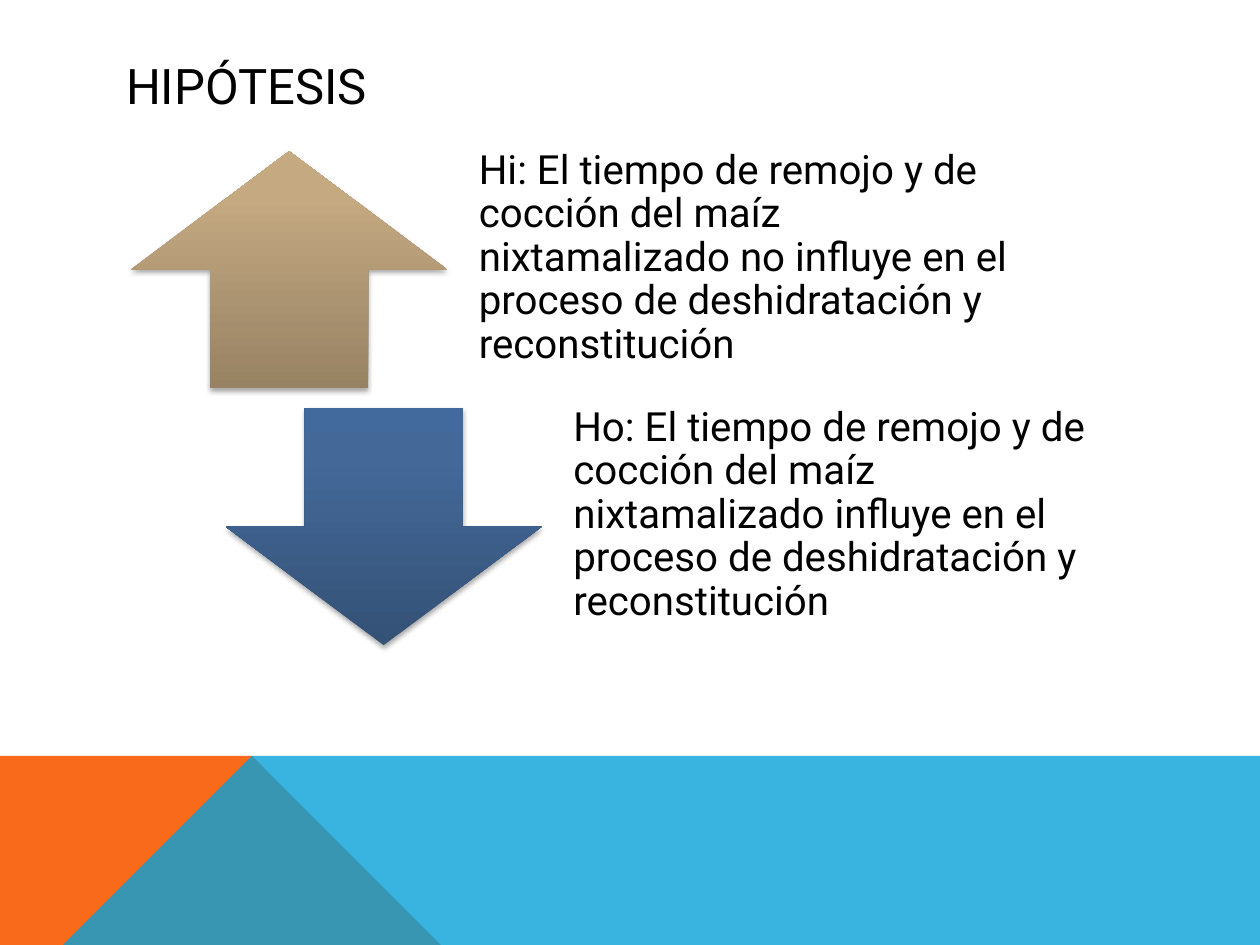
"""Build the hypothesis slide with two opposed arrows and a coloured footer."""
from copy import deepcopy
from dataclasses import dataclass

from lxml import etree
from pptx import Presentation
from pptx import util as u
from pptx.dml.color import RGBColor
from pptx.enum import shapes, text
from pptx.oxml.ns import qn

FONT = "Roboto"
BLACK = "000000"
ARROW_WIDTH, STATEMENT_WIDTH, ROW_HEIGHT = 2.51, 4.61, 1.88
STATEMENT_OFFSET = 2.58
GRADIENT_POSITIONS = (0, 0.8, 1)


@dataclass
class Hypothesis:
    left: float
    top: float
    arrow: shapes.MSO_SHAPE
    gradient: tuple[str, str, str]
    wording: str


@dataclass
class Band:
    points: list[tuple[float, float]]
    color: str
    opacity: int


HYPOTHESES = [
    Hypothesis(1.04, 1.2, shapes.MSO_SHAPE.UP_ARROW, ("978263", "C4A981", "C6AA80"),
               "Hi: El tiempo de remojo y de cocción del maíz nixtamalizado no influye "
               "en el proceso de deshidratación y reconstitución"),
    Hypothesis(1.79, 3.24, shapes.MSO_SHAPE.DOWN_ARROW, ("345176", "446999", "426A9C"),
               "Ho: El tiempo de remojo y de cocción del maíz nixtamalizado influye "
               "en el proceso de deshidratación y reconstitución"),
]
BANDS = [
    Band([(0, 7.5), (0, 5.52), (2.23, 5.52), (3.91, 7.5)], "F96A1B", 100),
    Band([(0, 7.5), (2.23, 5.52), (10, 5.52), (10, 7.5)], "08A1D9", 80),
]


def rgb(color: str) -> RGBColor:
    return RGBColor.from_string(color)


def add_alpha(color_element, percent: int) -> None:
    etree.SubElement(color_element, qn("a:alpha"), val=str(percent * 1000))


def format_text(frame, wording: str, size: float) -> None:
    frame.text = wording
    frame.word_wrap = True
    frame.auto_size = text.MSO_AUTO_SIZE.NONE
    frame.vertical_anchor = text.MSO_ANCHOR.MIDDLE
    paragraph = frame.paragraphs[0]
    paragraph.alignment = text.PP_ALIGN.LEFT
    paragraph.line_spacing = 0.9
    font = paragraph.runs[0].font
    font.name, font.size = FONT, u.Pt(size)
    font.color.rgb = rgb(BLACK)


def add_band(slide, band: Band) -> None:
    builder = slide.shapes.build_freeform(*band.points[0], scale=u.Inches(1))
    builder.add_line_segments(band.points[1:], close=True)
    shape = builder.convert_to_shape()
    shape.fill.solid()
    shape.fill.fore_color.rgb = rgb(band.color)
    shape.line.fill.background()
    shape.shadow.inherit = False
    if band.opacity < 100:
        add_alpha(shape._element.spPr.find(f".//{qn('a:srgbClr')}"), band.opacity)


def fill_gradient(shape, colors: tuple[str, str, str]) -> None:
    shape.fill.gradient()
    shape.fill.gradient_angle = 90
    stop_list = shape._element.spPr.find(f".//{qn('a:gsLst')}")
    stop_list.append(deepcopy(stop_list[-1]))
    for stop, position, color in zip(shape.fill.gradient_stops, GRADIENT_POSITIONS, colors):
        stop.position = position
        stop.color.rgb = rgb(color)


def add_shadow(shape) -> None:
    shape.shadow.inherit = False
    effects = shape._element.spPr.find(qn("a:effectLst"))
    shadow = etree.SubElement(effects, qn("a:outerShdw"), blurRad=str(u.Pt(3.1)),
                              dist=str(u.Pt(1.8)), dir="5400000", rotWithShape="0")
    add_alpha(etree.SubElement(shadow, qn("a:srgbClr"), val=BLACK), 35)


def add_hypothesis(slide, item: Hypothesis) -> None:
    arrow = slide.shapes.add_shape(item.arrow, u.Inches(item.left), u.Inches(item.top),
                                   u.Inches(ARROW_WIDTH), u.Inches(ROW_HEIGHT))
    fill_gradient(arrow, item.gradient)
    arrow.line.fill.background()
    add_shadow(arrow)
    statement = slide.shapes.add_textbox(
        u.Inches(item.left + STATEMENT_OFFSET), u.Inches(item.top),
        u.Inches(STATEMENT_WIDTH), u.Inches(ROW_HEIGHT))
    frame = statement.text_frame
    format_text(frame, item.wording, 23)
    frame.margin_left = frame.margin_right = frame.margin_bottom = u.Inches(0.18)
    frame.margin_top = 0


def main() -> None:
    presentation = Presentation()
    presentation.slide_width, presentation.slide_height = u.Inches(10), u.Inches(7.5)
    slide = presentation.slides.add_slide(presentation.slide_layouts[5])
    for band in BANDS:
        add_band(slide, band)
    title = slide.shapes.title
    title.left, title.top = u.Inches(0.9), u.Inches(0.4)
    title.width, title.height = u.Inches(8.22), u.Inches(0.6)
    format_text(title.text_frame, "HIPÓTESIS", 28)
    for item in HYPOTHESES:
        add_hypothesis(slide, item)
    presentation.save("out.pptx")


if __name__ == "__main__":
    main()
